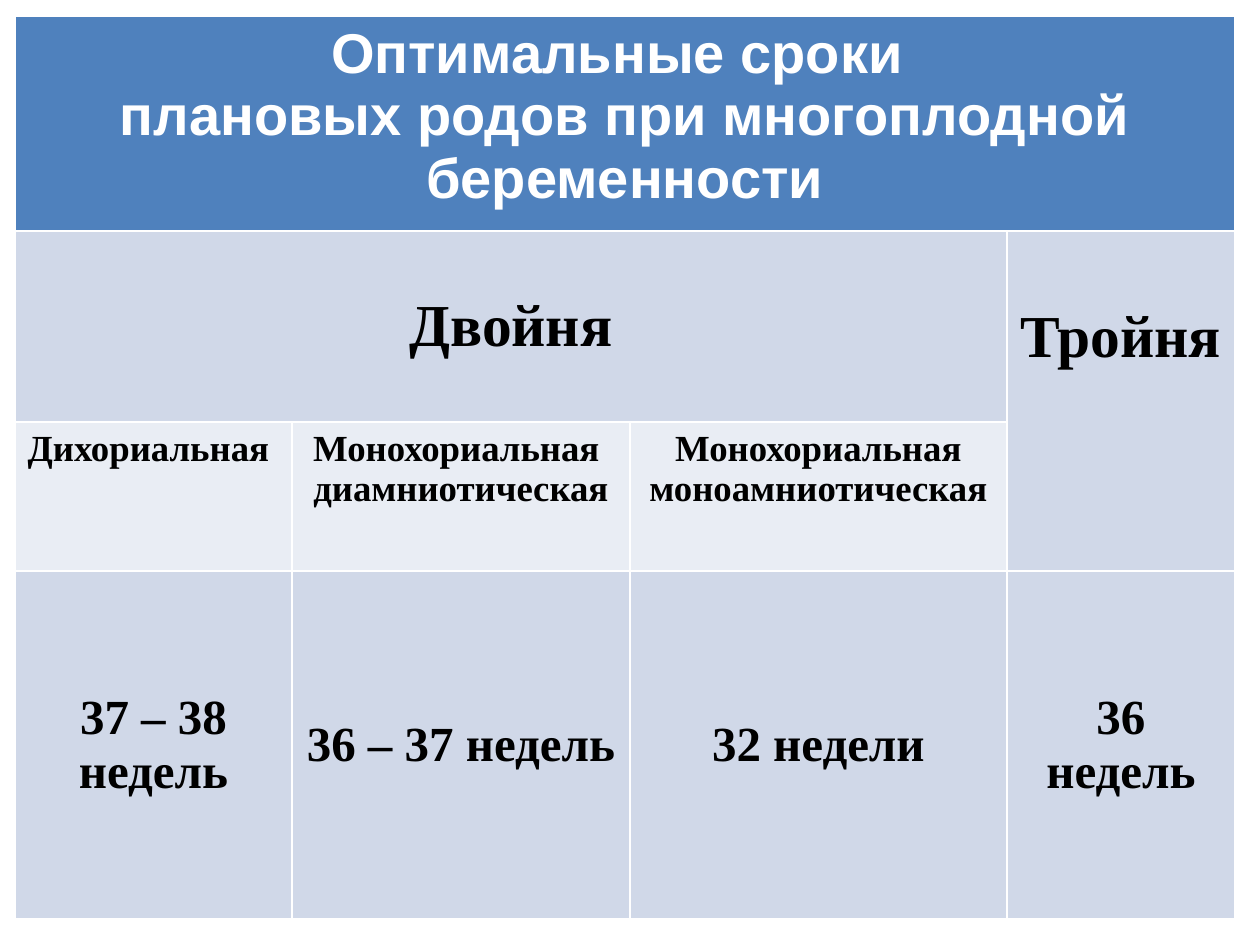
from pptx import Presentation
from pptx.dml.color import RGBColor
from pptx.enum.text import MSO_ANCHOR, PP_ALIGN
from pptx.util import Pt

PX = 914400 / 126
WHITE = RGBColor(0xFF, 0xFF, 0xFF)
BLACK = RGBColor(0x00, 0x00, 0x00)
BLUE = RGBColor(0x4F, 0x81, 0xBD)
BAND = RGBColor(0xD0, 0xD8, 0xE8)
PALE = RGBColor(0xE9, 0xED, 0xF4)

SLIDE = (1260, 945)
TABLE_POS = (15, 16)
COLS = [277, 338, 377, 228]
ROWS = [215, 191, 149, 348]
MERGES = [((0, 0), (0, 3)), ((1, 0), (1, 2)), ((1, 3), (2, 3))]

TITLE = ["Оптимальные сроки ", "плановых родов при многоплодной беременности"]
TYPES = [
    (["Дихориальная"], PP_ALIGN.LEFT),
    (["Монохориальная ", "диамниотическая"], PP_ALIGN.CENTER),
    (["Монохориальная", "моноамниотическая"], PP_ALIGN.CENTER),
]
TERMS = ["37 – 38 недель", "36 – 37 недель", "32 недели", "36 недель"]


def px(n):
    return round(n * PX)


def write(cell, lines, size, fill=BAND, color=BLACK, font="Times New Roman",
          align=PP_ALIGN.CENTER, anchor=MSO_ANCHOR.TOP):
    cell.fill.solid()
    cell.fill.fore_color.rgb = fill
    cell.vertical_anchor = anchor
    tf = cell.text_frame
    for i, line in enumerate(lines):
        p = tf.add_paragraph() if i else tf.paragraphs[0]
        p.alignment = align
        r = p.add_run()
        r.text = line
        r.font.name = font
        r.font.size = Pt(size)
        r.font.bold = True
        r.font.color.rgb = color


def main():
    prs = Presentation()
    prs.slide_width, prs.slide_height = map(px, SLIDE)
    s = prs.slides.add_slide(prs.slide_layouts[6])
    table = s.shapes.add_table(
        len(ROWS), len(COLS), *map(px, TABLE_POS), px(sum(COLS)), px(sum(ROWS))
    ).table
    for column, width in zip(table.columns, COLS):
        column.width = px(width)
    for row, height in zip(table.rows, ROWS):
        row.height = px(height)
    for first, last in MERGES:
        table.cell(*first).merge(table.cell(*last))

    write(table.cell(0, 0), TITLE, 32, fill=BLUE, color=WHITE, font="Arial")
    write(table.cell(1, 0), ["Двойня"], 34, anchor=MSO_ANCHOR.MIDDLE)
    triplets = table.cell(1, 3)
    write(triplets, ["Тройня"], 34)
    triplets.margin_top = px(74)
    for c, (lines, align) in enumerate(TYPES):
        write(table.cell(2, c), lines, 21, fill=PALE, align=align)
    for c, term in enumerate(TERMS):
        write(table.cell(3, c), [term], 28, anchor=MSO_ANCHOR.MIDDLE)
    prs.save("out.pptx")


if __name__ == "__main__":
    main()
